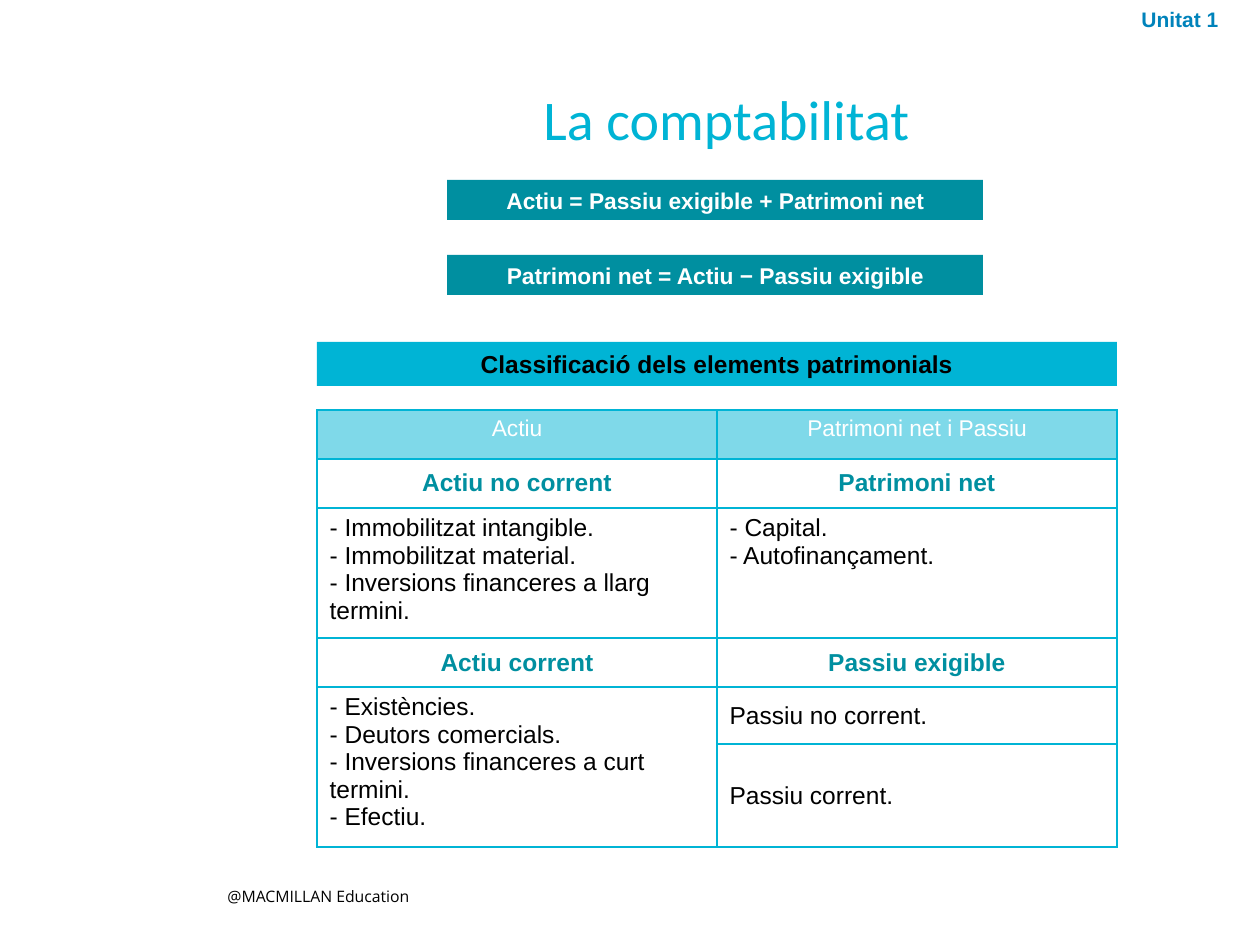
from lxml.etree import SubElement
from pptx import Presentation
from pptx.dml.color import RGBColor
from pptx.enum.shapes import MSO_SHAPE
from pptx.enum.text import MSO_ANCHOR, PP_ALIGN
from pptx.oxml import parse_xml
from pptx.oxml.ns import nsdecls, qn
from pptx.util import Pt

EMU_PER_PX = 914400 / 126
CYAN, TEAL, BLUE, BLACK, WHITE = "00B4D5", "008FA0", "0083BB", "000000", "FFFFFF"

COL_WIDTHS = [400, 400]
ROW_HEIGHTS = [49, 49, 130, 49, 57, 103]
HEADER = dict(size=13, color=WHITE, center=True)
GROUP = dict(color=TEAL, bold=True, center=True, middle=True)
ROWS = [
    (HEADER, "Actiu", HEADER, "Patrimoni net i Passiu"),
    (GROUP, "Actiu no corrent", GROUP, "Patrimoni net"),
    ({}, "- Immobilitzat intangible.\n- Immobilitzat material.\n"
         "- Inversions financeres a llarg termini.",
     {}, "- Capital.\n- Autofinançament."),
    (GROUP, "Actiu corrent", GROUP, "Passiu exigible"),
    ({}, "- Existències.\n- Deutors comercials.\n"
         "- Inversions financeres a curt termini.\n- Efectiu.",
     dict(middle=True), "Passiu no corrent."),
    ({}, "", dict(middle=True), "Passiu corrent."),
]


def px(n):
    return round(n * EMU_PER_PX)


def rgb(color):
    return RGBColor.from_string(color)


def write(tf, text, size=14, color=BLACK, font="Arial", bold=False,
          center=False, middle=False, spacing=None):
    tf.word_wrap = True
    tf.vertical_anchor = MSO_ANCHOR.MIDDLE if middle else MSO_ANCHOR.TOP
    for i, line in enumerate(text.split("\n")):
        p = tf.add_paragraph() if i else tf.paragraphs[0]
        p.alignment = PP_ALIGN.CENTER if center else PP_ALIGN.LEFT
        if spacing:
            p.line_spacing = spacing
        r = p.add_run()
        r.text = line
        r.font.name, r.font.size, r.font.bold = font, Pt(size), bold
        r.font.color.rgb = rgb(color)


def add_text(s, box, text, **fmt):
    sp = s.shapes.add_textbox(*map(px, box))
    write(sp.text_frame, text, **fmt)


def add_bar(s, box, fill, text, **fmt):
    sp = s.shapes.add_shape(MSO_SHAPE.RECTANGLE, *map(px, box))
    sp.shadow.inherit = False
    sp.fill.solid()
    sp.fill.fore_color.rgb = rgb(fill)
    sp.line.fill.background()
    write(sp.text_frame, text, bold=True, center=True, middle=True, **fmt)


def fill_cell(cell, color=None, alpha=100):
    if color is None:
        cell.fill.background()
        return
    cell.fill.solid()
    cell.fill.fore_color.rgb = rgb(color)
    clr = cell._tc.tcPr.find(f".//{qn('a:srgbClr')}")
    SubElement(clr, qn("a:alpha"), val=str(alpha * 1000))


def border_cell(cell, color, width=1):
    # Border elements come before the fill in the cell properties
    for i, side in enumerate(("lnL", "lnR", "lnT", "lnB")):
        ln = parse_xml(
            f'<a:{side} {nsdecls("a")} w="{Pt(width)}"><a:solidFill>'
            f'<a:srgbClr val="{color}"/></a:solidFill></a:{side}>')
        cell._tc.get_or_add_tcPr().insert(i, ln)


def add_balance_table(s, left, top):
    frame = s.shapes.add_table(
        len(ROWS), len(COL_WIDTHS), px(left), px(top),
        px(sum(COL_WIDTHS)), px(sum(ROW_HEIGHTS)))
    table = frame.table
    table.first_row = table.horz_banding = False
    for col, width in zip(table.columns, COL_WIDTHS):
        col.width = px(width)
    for row, height in zip(table.rows, ROW_HEIGHTS):
        row.height = px(height)
    table.cell(4, 0).merge(table.cell(5, 0))

    for i, (left_fmt, left_text, right_fmt, right_text) in enumerate(ROWS):
        pairs = ((left_fmt, left_text), (right_fmt, right_text))
        for j, (fmt, text) in enumerate(pairs):
            cell = table.cell(i, j)
            if i == 0:
                fill_cell(cell, CYAN, alpha=50)
            else:
                fill_cell(cell)
            border_cell(cell, CYAN)
            if text:
                fmt = dict(fmt)
                if fmt.pop("middle", False):
                    cell.vertical_anchor = MSO_ANCHOR.MIDDLE
                write_cell(cell, text, fmt)


def write_cell(cell, text, fmt):
    anchor = cell.vertical_anchor
    write(cell.text_frame, text, **fmt)
    cell.vertical_anchor = anchor


def main():
    prs = Presentation()
    prs.slide_width, prs.slide_height = px(1260), px(945)
    s = prs.slides.add_slide(prs.slide_layouts[6])

    # Footer, unit label and title
    add_text(s, (215, 881, 242, 32), "@MACMILLAN Education",
             size=9, font="Open Sans")
    add_text(s, (1129, 0, 131, 38), "Unitat 1", size=12, color=BLUE, bold=True)
    add_text(s, (193, 86, 1067, 68), "La comptabilitat", size=32, color=CYAN,
             font="Calibri", center=True, spacing=0.9)

    # Accounting equations
    equations = ("Actiu = Passiu exigible + Patrimoni net",
                 "Patrimoni net = Actiu − Passiu exigible")
    for i, equation in enumerate(equations):
        add_bar(s, (447, 180 + 75 * i, 536, 40), TEAL, equation,
                size=13, color=WHITE)

    # Classification heading and table
    add_bar(s, (317, 342, 800, 44), CYAN,
            "Classificació dels elements patrimonials")
    add_balance_table(s, 317, 410)

    prs.save("out.pptx")


if __name__ == "__main__":
    main()
